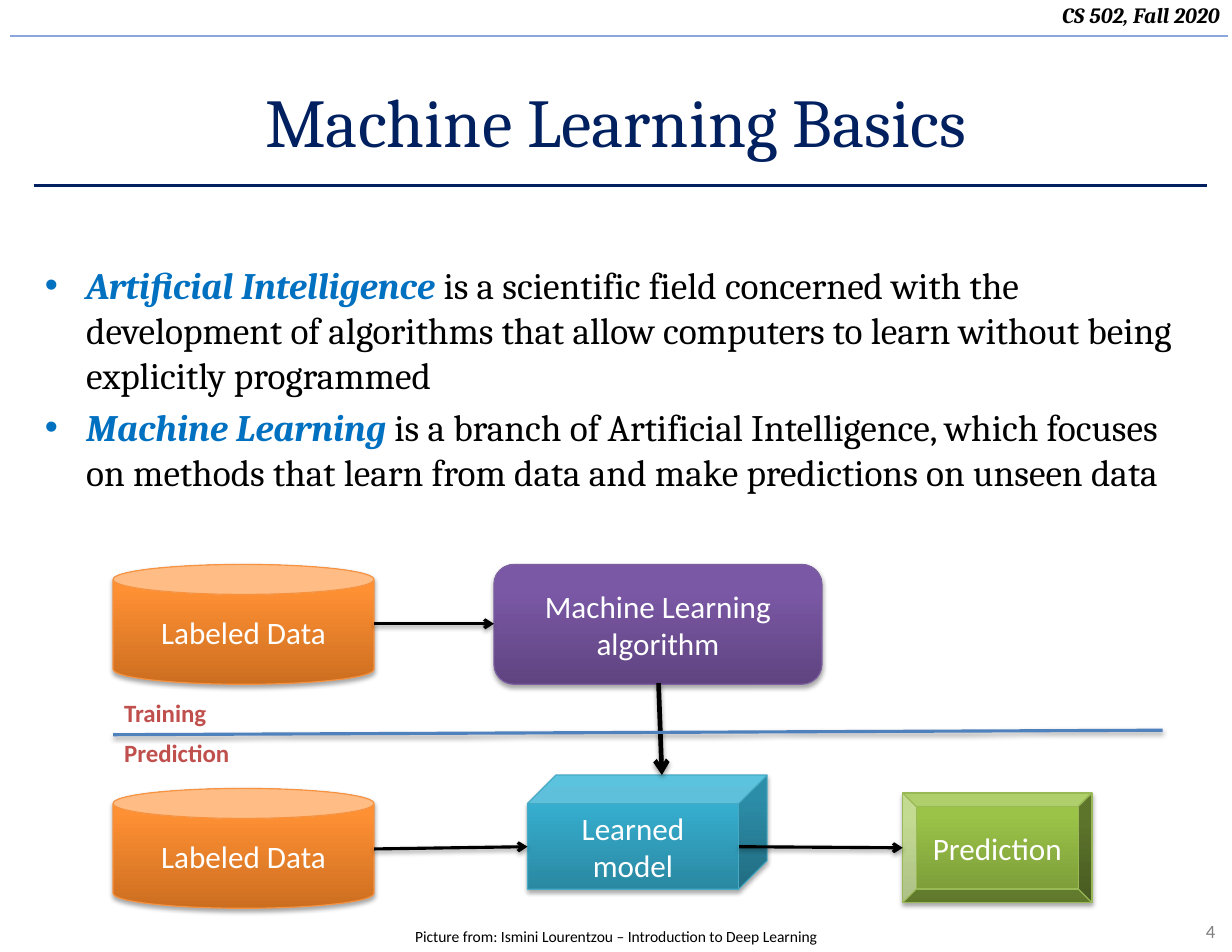
from copy import deepcopy

from lxml import etree
from pptx import Presentation
from pptx.dml.color import RGBColor
from pptx.enum.shapes import MSO_CONNECTOR, MSO_SHAPE as SHAPE
from pptx.enum.text import MSO_ANCHOR as ANCHOR, MSO_AUTO_SIZE as AUTO, PP_ALIGN as ALIGN
from pptx.oxml.ns import qn
from pptx.util import Inches, Pt

COLORS = {
    "navy": "002060", "blue": "0070C0", "rule": "8AA6DC", "divider": "4F81BD",
    "red": "C0504D", "gray": "808080", "black": "000000", "white": "FFFFFF",
}
# Outline, then gradient from bottom to top
BOX_COLORS = {
    "orange": ("F69240", ("CC6E20", "FF9034", "FF9136")),
    "purple": ("7D60A0", ("5F4480", "7B58A6", "7C57A8")),
    "teal": ("46AAC5", ("2A88A2", "37B1D2", "34B4D6")),
    "green": ("98B955", ("779737", "9BC348", "9DC746")),
}
GRADIENT_POSITIONS = (0, 0.8, 1)

TITLE = "Machine Learning Basics"
DEFINITIONS = [
    ("Artificial Intelligence ",
     "is a scientific field concerned with the development of algorithms that "
     "allow computers to learn without being explicitly programmed"),
    ("Machine Learning ",
     "is a branch of Artificial Intelligence, which focuses on methods that "
     "learn from data and make predictions on unseen data"),
]
BOXES = [
    ("Labeled Data", SHAPE.CAN, "orange", (1.01, 5.04, 2.33, 1.07)),
    ("Labeled Data", SHAPE.CAN, "orange", (1.01, 7.04, 2.33, 1.07)),
    ("Machine Learning algorithm", SHAPE.ROUNDED_RECTANGLE, "purple", (4.41, 5.04, 2.93, 1.07)),
    ("Learned model", SHAPE.CUBE, "teal", (4.71, 6.92, 2.14, 1.02)),
    ("Prediction", SHAPE.BEVEL, "green", (8.06, 7.08, 1.69, 0.98)),
]
# Start, end, width
ARROWS = [
    ((3.34, 5.57), (4.41, 5.57), 2),
    ((3.34, 7.58), (4.71, 7.56), 2),
    ((6.6, 7.56), (8.06, 7.57), 2),
    ((5.88, 6.1), (5.91, 6.92), 3),
]
PHASES = [("Training", (1.01, 6.18, 1.05, 0.38)), ("Prediction", (1.01, 6.54, 1.3, 0.38))]
HEADER = "CS 502, Fall 2020"
PAGE_NUMBER = "4"
CREDIT = "Picture from: Ismini Lourentzou – Introduction to Deep Learning"


def rgb(name):
    return RGBColor.from_string(COLORS[name])


def place(shape, box):
    shape.left, shape.top, shape.width, shape.height = map(Inches, box)


def style(font, size, color, name="Calibri", bold=False, italic=False):
    font.size, font.name, font.bold, font.italic = Pt(size), name, bold, italic
    font.color.rgb = rgb(color)


def set_effects(shape, opacity=0, distance=0):
    """Replace inherited effects with a downward shadow, or with none."""
    properties = shape._element.spPr
    effects = etree.SubElement(properties, qn("a:effectLst"))
    if opacity:
        shadow = etree.SubElement(
            effects, qn("a:outerShdw"), blurRad=str(Pt(3.1)), dist=str(Pt(distance)),
            dir="5400000", rotWithShape="0")
        color = etree.SubElement(shadow, qn("a:srgbClr"), val=COLORS["black"])
        etree.SubElement(color, qn("a:alpha"), val=str(opacity * 1000))


def add_line(slide, start, end, color, width, arrow=False, shadow=False):
    line = slide.shapes.add_connector(
        MSO_CONNECTOR.STRAIGHT, *map(Inches, start + end))
    line.line.color.rgb = rgb(color)
    line.line.width = Pt(width)
    if arrow:
        etree.SubElement(line.line._get_or_add_ln(), qn("a:tailEnd"), type="arrow")
    if shadow:
        set_effects(line, 38, 1.6)
    else:
        set_effects(line)


def add_text(slide, text, box, size, color, align=ALIGN.LEFT, wrap=True, **font):
    label = slide.shapes.add_textbox(*map(Inches, box))
    frame = label.text_frame
    frame.text = text
    frame.word_wrap = wrap
    paragraph = frame.paragraphs[0]
    paragraph.alignment = align
    style(paragraph.runs[0].font, size, color, **font)


def add_box(slide, text, kind, color, box):
    shape = slide.shapes.add_shape(kind, *map(Inches, box))
    outline, gradient = BOX_COLORS[color]
    shape.fill.gradient()
    shape.fill.gradient_angle = 90
    stop_list = shape._element.spPr.find(".//" + qn("a:gsLst"))
    stop_list.append(deepcopy(stop_list[-1]))
    for stop, position, shade in zip(shape.fill.gradient_stops, GRADIENT_POSITIONS, gradient):
        stop.position = position
        stop.color.rgb = RGBColor.from_string(shade)
    shape.line.color.rgb = RGBColor.from_string(outline)
    shape.line.width = Pt(0.75)
    set_effects(shape, 35, 1.8)
    frame = shape.text_frame
    frame.text = text
    frame.word_wrap = True
    frame.vertical_anchor = ANCHOR.MIDDLE
    frame.paragraphs[0].alignment = ALIGN.CENTER
    style(frame.paragraphs[0].runs[0].font, 20, "white")


def fill_title(title):
    place(title, (0, 0.5, 11, 1.15))
    frame = title.text_frame
    frame.text = TITLE
    frame.auto_size = AUTO.NONE
    frame.vertical_anchor = ANCHOR.MIDDLE
    frame.paragraphs[0].alignment = ALIGN.CENTER
    style(frame.paragraphs[0].runs[0].font, 44, "navy", "Cambria")


def fill_definitions(body):
    place(body, (0.3, 2.29, 10.48, 3.1))
    frame = body.text_frame
    frame.auto_size = AUTO.NONE
    for index, (term, meaning) in enumerate(DEFINITIONS):
        paragraph = frame.add_paragraph() if index else frame.paragraphs[0]
        properties = paragraph._p.get_or_add_pPr()
        properties.set("marL", str(Inches(0.37)))
        properties.set("indent", str(-Inches(0.37)))
        etree.SubElement(properties, qn("a:buFont"), typeface="Arial")
        etree.SubElement(properties, qn("a:buChar"), char="•")
        paragraph.space_before = Pt(4.8 if index else 0)
        for text, color, strong in ((term, "blue", True), (meaning, "black", False)):
            run = paragraph.add_run()
            run.text = text
            style(run.font, 24, color, "Cambria", strong, strong)


def main():
    deck = Presentation()
    deck.slide_width, deck.slide_height = Inches(11), Inches(8.5)
    slide = deck.slides.add_slide(deck.slide_layouts[1])

    add_text(slide, PAGE_NUMBER, (9.74, 8.16, 1.21, 0.3), 12, "gray", ALIGN.RIGHT)
    add_text(slide, HEADER, (0, -0.03, 10.99, 0.34), 14, "black", ALIGN.RIGHT,
             name="Cambria", bold=True, italic=True)
    add_line(slide, (0.09, 0.32), (10.96, 0.32), "rule", 1.5)
    add_line(slide, (0.3, 1.66), (10.78, 1.66), "navy", 2)
    fill_title(slide.shapes.title)
    fill_definitions(slide.placeholders[1])

    for box in BOXES:
        add_box(slide, *box)
    for start, end, width in ARROWS:
        add_line(slide, start, end, "black", width, arrow=True, shadow=True)
    add_line(slide, (1.01, 6.56), (10.38, 6.52), "divider", 2, shadow=True)
    for phase, box in PHASES:
        add_text(slide, phase, box, 16, "red", wrap=False, bold=True)
    add_text(slide, CREDIT, (1.72, 8.23, 7.56, 0.27), 10, "black", ALIGN.CENTER)

    deck.save("out.pptx")


if __name__ == "__main__":
    main()
